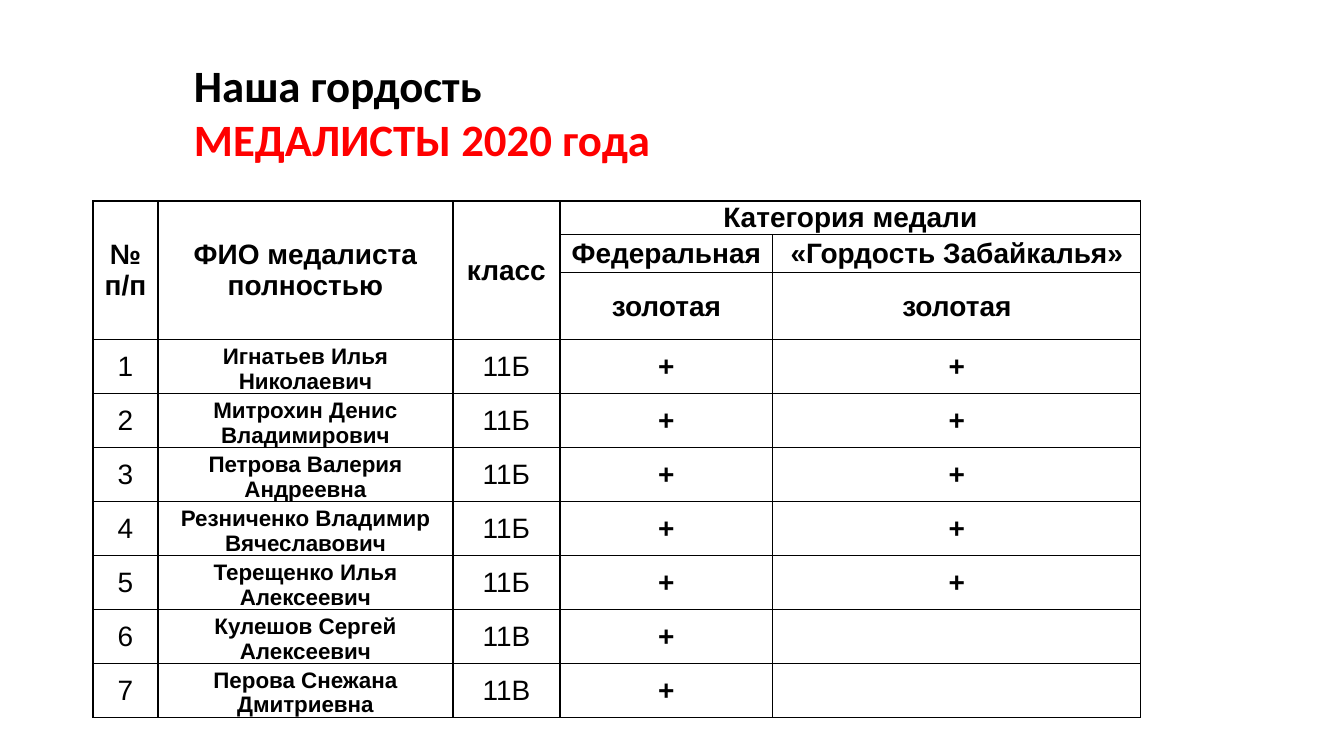
"""Build the slide listing the school medalists of 2020."""
from lxml import etree
from pptx import Presentation
from pptx import util as u
from pptx.dml.color import RGBColor
from pptx.enum import text
from pptx.oxml import ns

BLACK = RGBColor(0, 0, 0)
RED = RGBColor(255, 0, 0)
PX = 914400 / 100.8
COLUMN_WIDTHS = [65, 295, 107, 213, 368]
HEADER_HEIGHTS = [33, 38, 67]
ROW_HEIGHT = 54
HEADER = [
    ["№\nп/п", "ФИО медалиста\nполностью", "класс", "Категория медали", ""],
    ["", "", "", "Федеральная", "«Гордость Забайкалья»"],
    ["", "", "", "золотая", "золотая"],
]
MEDALISTS = [
    ("Игнатьев Илья Николаевич", "11Б", "+", "+"),
    ("Митрохин Денис Владимирович", "11Б", "+", "+"),
    ("Петрова Валерия Андреевна", "11Б", "+", "+"),
    ("Резниченко Владимир Вячеславович", "11Б", "+", "+"),
    ("Терещенко Илья Алексеевич", "11Б", "+", "+"),
    ("Кулешов Сергей Алексеевич", "11В", "+", ""),
    ("Перова Снежана Дмитриевна", "11В", "+", ""),
]


def px(length):
    """Turn pixels into EMU."""
    return u.Emu(round(length * PX))


def format_runs(paragraph, name, size, color, bold):
    """Give every run of a paragraph its font."""
    for run in paragraph.runs:
        run.font.name = name
        run.font.size = u.Pt(size)
        run.font.color.rgb = color
        run.font.bold = bold


def add_title(slide, lines):
    """Add the heading with one coloured paragraph per line."""
    frame = slide.shapes.add_textbox(px(184), px(53), px(480), px(119)).text_frame
    frame.word_wrap = False
    frame.auto_size = text.MSO_AUTO_SIZE.SHAPE_TO_FIT_TEXT
    frame.text = "\n".join(line for line, color in lines)
    for paragraph, (line, color) in zip(frame.paragraphs, lines):
        format_runs(paragraph, "Calibri", 32, color, True)


def add_borders(cell):
    """Draw a thin black line on each side of a cell."""
    properties = cell._tc.get_or_add_tcPr()
    for side in ("a:lnL", "a:lnR", "a:lnT", "a:lnB"):
        line = etree.SubElement(properties, ns.qn(side), w=str(u.Pt(1)))
        fill = etree.SubElement(line, ns.qn("a:solidFill"))
        etree.SubElement(fill, ns.qn("a:srgbClr"), val=str(BLACK))


def fill_cell(cell, content, size, bold, anchor):
    """Write centred text into a bordered cell without a fill."""
    add_borders(cell)
    cell.fill.background()
    cell.margin_left = cell.margin_right = px(7)
    cell.margin_top = cell.margin_bottom = 0
    cell.vertical_anchor = anchor
    cell.text_frame.text = content
    for paragraph in cell.text_frame.paragraphs:
        paragraph.alignment = text.PP_ALIGN.CENTER
        format_runs(paragraph, "Arial", size, BLACK, bold)


def add_medal_table(slide):
    """Add the table with its merged header and one row per medalist."""
    numbered = [(str(number), *row) for number, row in enumerate(MEDALISTS, 1)]
    rows = HEADER + numbered
    heights = HEADER_HEIGHTS + [ROW_HEIGHT] * len(numbered)
    table = slide.shapes.add_table(
        len(rows), len(COLUMN_WIDTHS), px(93), px(201),
        px(sum(COLUMN_WIDTHS)), px(sum(heights))).table
    for column, width in zip(table.columns, COLUMN_WIDTHS):
        column.width = px(width)
    for row, height in zip(table.rows, heights):
        row.height = px(height)
    for r, row in enumerate(rows):
        in_header = r < len(HEADER)
        for c, content in enumerate(row):
            is_name = c == 1 and not in_header
            fill_cell(
                table.cell(r, c), content,
                size=16 if is_name else 20,
                bold=in_header or c not in (0, 2),
                anchor=text.MSO_ANCHOR.BOTTOM if is_name else text.MSO_ANCHOR.MIDDLE)
    for c in range(3):
        table.cell(0, c).merge(table.cell(2, c))
    table.cell(0, 3).merge(table.cell(0, 4))


def main():
    """Build and save the presentation."""
    presentation = Presentation()
    presentation.slide_width = px(1344)
    presentation.slide_height = px(756)
    slide = presentation.slides.add_slide(presentation.slide_layouts[6])
    add_title(slide, [("Наша гордость", BLACK), ("МЕДАЛИСТЫ 2020 года", RED)])
    add_medal_table(slide)
    presentation.save("out.pptx")


if __name__ == "__main__":
    main()
